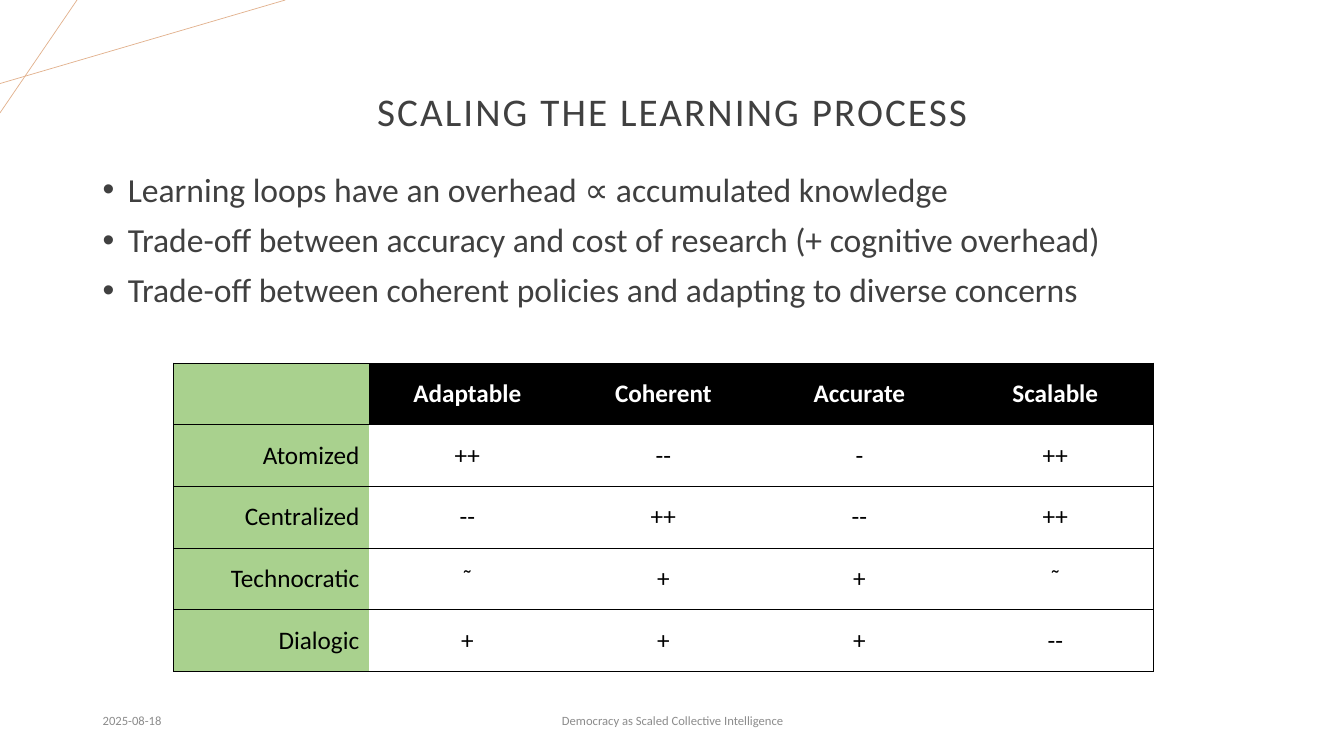
from dataclasses import dataclass

from lxml import etree
from pptx import Presentation
from pptx.dml.color import RGBColor
from pptx.enum import shapes, text
from pptx.oxml import ns
from pptx.util import Inches, Pt


@dataclass(frozen=True)
class Theme:
    font: str = "Calibri"
    ink: str = "404040"
    muted: str = "8C8C8C"
    accent: str = "E2B18D"
    dark: str = "000000"
    light: str = "FFFFFF"
    label: str = "A9D18E"
    title_size: int = 28
    body_size: int = 24
    table_size: int = 18
    footer_size: int = 9
    rule: float = 0.5


THEME = Theme()
WIDTH, HEIGHT = 13.33, 7.5
LEFT, CONTENT_WIDTH = 0.92, 11.5
CENTER, START, END = text.PP_ALIGN.CENTER, text.PP_ALIGN.LEFT, text.PP_ALIGN.RIGHT

BULLETS = [
    "Learning loops have an overhead ∝ accumulated knowledge",
    "Trade-off between accuracy and cost of research (+ cognitive overhead)",
    "Trade-off between coherent policies and adapting to diverse concerns",
]
RATINGS = [
    ["", "Adaptable", "Coherent", "Accurate", "Scalable"],
    ["Atomized", "++", "--", "-", "++"],
    ["Centralized", "--", "++", "--", "++"],
    ["Technocratic", "˜", "+", "+", "˜"],
    ["Dialogic", "+", "+", "+", "--"],
]


def write(paragraph, words, size, color, align=START, bold=False, **spacing):
    """Fill a paragraph with one formatted run and return the run."""
    for name, value in {"alignment": align, **spacing}.items():
        setattr(paragraph, name, value)
    run = paragraph.add_run()
    run.text = words
    for name, value in {"name": THEME.font, "size": Pt(size), "bold": bold}.items():
        setattr(run.font, name, value)
    run.font.color.rgb = RGBColor.from_string(color)
    return run


def add_frame(slide, box, anchor):
    frame = slide.shapes.add_textbox(*map(Inches, box)).text_frame
    frame.word_wrap = True
    frame.vertical_anchor = anchor
    return frame


def add_corner_lines(slide, box):
    """Two thin lines crossing in the corner of the box."""
    left, top, width, height = box
    ends = [
        (left, top + 0.74 * height, left + width, top),
        (left + 0.27 * width, top, left, top + height),
    ]
    for points in ends:
        line = slide.shapes.add_connector(
            shapes.MSO_CONNECTOR.STRAIGHT, *map(Inches, points))
        line.line.color.rgb = RGBColor.from_string(THEME.accent)
        line.line.width = Pt(THEME.rule)
        etree.SubElement(line._element.spPr, ns.qn("a:effectLst"))


def add_title(slide, box, words):
    frame = add_frame(slide, box, text.MSO_ANCHOR.MIDDLE)
    run = write(frame.paragraphs[0], words, THEME.title_size, THEME.ink,
                CENTER, line_spacing=0.9)
    run._r.get_or_add_rPr().set("spc", "150")


def add_bullets(slide, box, lines):
    frame = add_frame(slide, box, text.MSO_ANCHOR.TOP)
    indent = Inches(0.25)
    for index, words in enumerate(lines):
        paragraph = frame.add_paragraph() if index else frame.paragraphs[0]
        write(paragraph, words, THEME.body_size, THEME.ink,
              line_spacing=0.9, space_before=Pt(10))
        props = paragraph._p.get_or_add_pPr()
        props.set("marL", str(indent))
        props.set("indent", str(-indent))
        etree.SubElement(props, ns.qn("a:buFont"), typeface="Arial")
        etree.SubElement(props, ns.qn("a:buChar"), char="•")


def set_borders(cell, drawn_sides):
    """Rule the drawn sides of a cell and clear the others."""
    props = cell._tc.get_or_add_tcPr()
    for place, side in enumerate("LRTB"):
        line = etree.Element(ns.qn(f"a:ln{side}"), w=str(Pt(THEME.rule)))
        if side in drawn_sides:
            fill = etree.SubElement(line, ns.qn("a:solidFill"))
            etree.SubElement(fill, ns.qn("a:srgbClr"), val=THEME.dark)
        else:
            etree.SubElement(line, ns.qn("a:noFill"))
        props.insert(place, line)


def add_ratings(slide, box, rows):
    row_count, column_count = len(rows), len(rows[0])
    table = slide.shapes.add_table(row_count, column_count, *map(Inches, box)).table
    for r, row in enumerate(rows):
        for c, words in enumerate(row):
            cell = table.cell(r, c)
            is_label, is_header = c == 0, r == 0
            fill = THEME.label if is_label else THEME.dark if is_header else THEME.light
            cell.fill.solid()
            cell.fill.fore_color.rgb = RGBColor.from_string(fill)
            cell.vertical_anchor = text.MSO_ANCHOR.MIDDLE
            if words:
                write(cell.text_frame.paragraphs[0], words, THEME.table_size,
                      THEME.light if is_header else THEME.dark,
                      END if is_label else CENTER, bold=is_header)
            outer = ("L" if is_label else "") + ("R" if c == column_count - 1 else "")
            set_borders(cell, "TB" + outer)


def add_footer(slide, box, date, talk):
    left, top, width, height = box
    talk_width = 4.5
    parts = [
        (date, left, 3, START),
        (talk, left + (width - talk_width) / 2, talk_width, CENTER),
    ]
    for words, x, part_width, align in parts:
        frame = add_frame(slide, (x, top, part_width, height), text.MSO_ANCHOR.MIDDLE)
        write(frame.paragraphs[0], words, THEME.footer_size, THEME.muted, align)


def build_learning_slide(deck):
    slide = deck.slides.add_slide(deck.slide_layouts[6])
    add_corner_lines(slide, (0, 0, 2.83, 1.12))
    add_title(slide, (LEFT, 0.4, CONTENT_WIDTH, 1.45), "SCALING THE LEARNING PROCESS")
    add_footer(slide, (LEFT, 6.95, CONTENT_WIDTH, 0.4),
               "2025-08-18", "Democracy as Scaled Collective Intelligence")
    add_bullets(slide, (LEFT, 1.67, CONTENT_WIDTH, 1.93), BULLETS)
    add_ratings(slide, (1.72, 3.6, 9.72, 3.06), RATINGS)


def main():
    deck = Presentation()
    deck.slide_width, deck.slide_height = Inches(WIDTH), Inches(HEIGHT)
    build_learning_slide(deck)
    deck.save("out.pptx")


if __name__ == "__main__":
    main()
